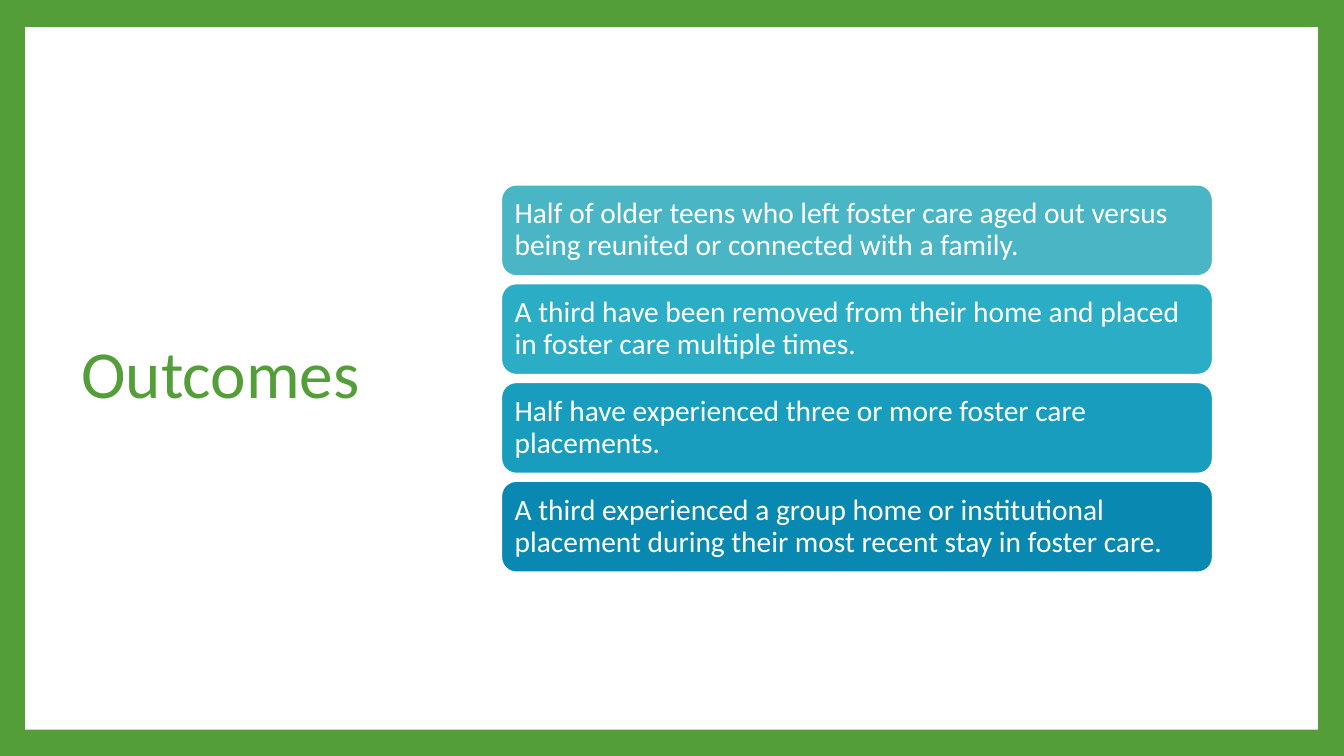
from pptx import Presentation
from pptx.dml.color import RGBColor
from pptx.enum.shapes import MSO_SHAPE
from pptx.enum.text import MSO_ANCHOR, PP_ALIGN
from pptx.util import Inches, Pt

GREEN = "549E39"
WHITE = "FFFFFF"
CARD_LEFT, CARD_TOP = 4.97, 1.83
CARD_WIDTH, CARD_HEIGHT = 7.06, 0.91
CARD_PITCH = 0.98
CARD_INSET = Inches(0.09)

outcomes = [
    ("4AB5C4", "Half of older teens who left foster care aged out versus being reunited or connected with a family."),
    ("2CADC6", "A third have been removed from their home and placed in foster care multiple times."),
    ("189DBE", "Half have experienced three or more foster care placements."),
    ("0989B1", "A third experienced a group home or institutional placement during their most recent stay in foster care."),
]


def paint(color_format, hex_color):
    """Give a fill, line or font colour format the colour of a hex string."""
    color_format.rgb = RGBColor.from_string(hex_color)


def write(text_frame, text, size, hex_color):
    """Set one left-aligned, vertically centred paragraph."""
    text_frame.text = text
    text_frame.word_wrap = True
    text_frame.vertical_anchor = MSO_ANCHOR.MIDDLE
    paragraph = text_frame.paragraphs[0]
    paragraph.alignment = PP_ALIGN.LEFT
    paragraph.line_spacing = 0.9
    font = paragraph.runs[0].font
    font.name = "Calibri"
    font.size = Pt(size)
    paint(font.color, hex_color)


presentation = Presentation()
presentation.slide_width = Inches(13.33)
presentation.slide_height = Inches(7.5)
slide = presentation.slides.add_slide(presentation.slide_layouts[6])

background = slide.background.fill
background.solid()
paint(background.fore_color, GREEN)

panel = slide.shapes.add_shape(
    MSO_SHAPE.RECTANGLE, Inches(0.25), Inches(0.27), Inches(12.82), Inches(6.97))
panel.shadow.inherit = False
panel.fill.solid()
paint(panel.fill.fore_color, WHITE)
panel.line.fill.background()

title = slide.shapes.add_textbox(Inches(0.71), Inches(0.67), Inches(3.68), Inches(6.13))
write(title.text_frame, "Outcomes", 48, GREEN)

for row, (card_color, outcome) in enumerate(outcomes):
    card = slide.shapes.add_shape(
        MSO_SHAPE.ROUNDED_RECTANGLE,
        Inches(CARD_LEFT), Inches(CARD_TOP + row * CARD_PITCH),
        Inches(CARD_WIDTH), Inches(CARD_HEIGHT))
    card.shadow.inherit = False
    card.fill.solid()
    paint(card.fill.fore_color, card_color)
    paint(card.line.color, WHITE)
    card.line.width = Pt(1.5)
    text_frame = card.text_frame
    text_frame.margin_left = text_frame.margin_right = CARD_INSET
    text_frame.margin_top = text_frame.margin_bottom = CARD_INSET
    write(text_frame, outcome, 21, WHITE)

presentation.save("out.pptx")
